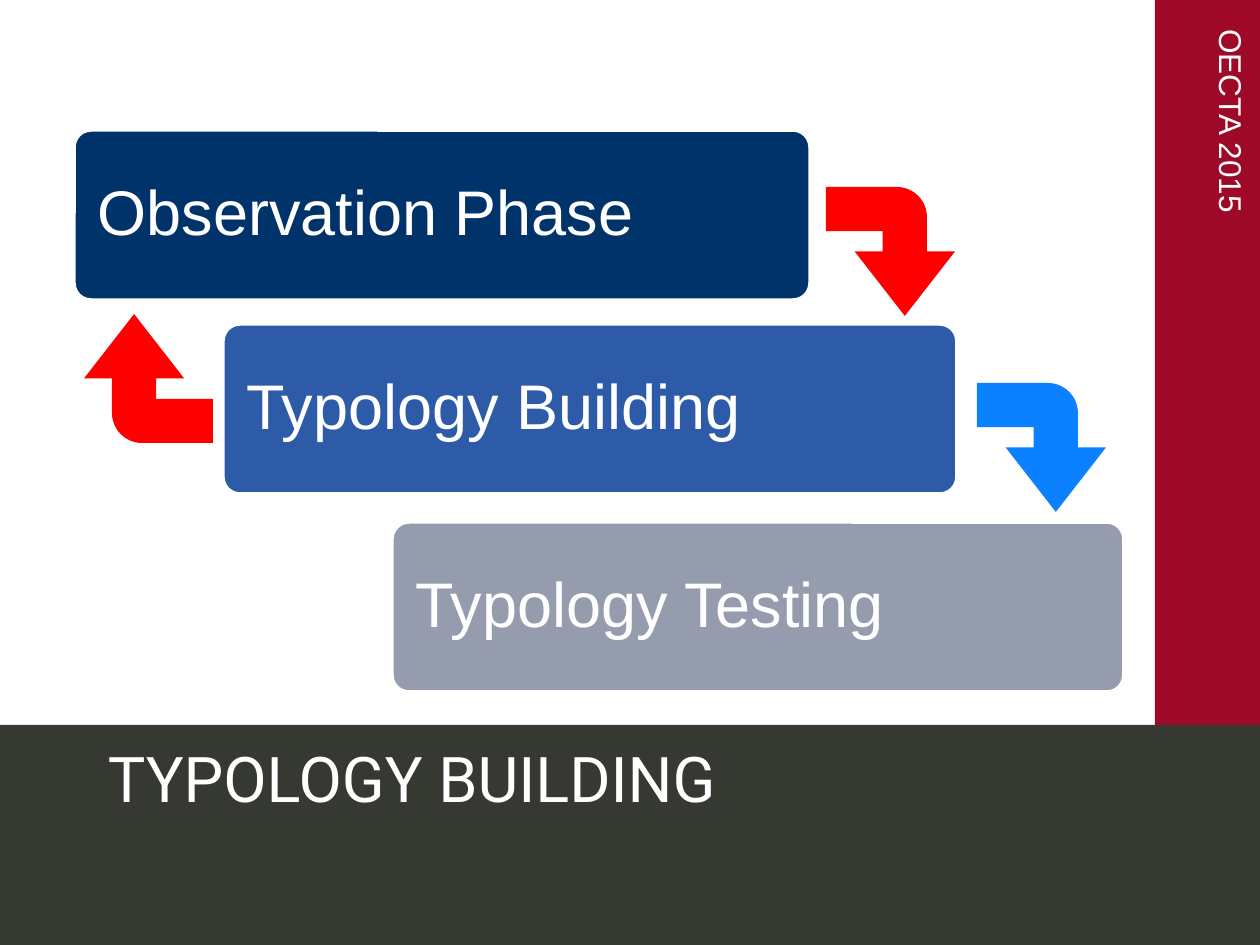
from pptx import Presentation
from pptx.dml.color import RGBColor
from pptx.enum.shapes import MSO_SHAPE
from pptx.enum.text import MSO_ANCHOR, PP_ALIGN
from pptx.util import Pt

RECT, ROUNDED, BENT_ARROW = MSO_SHAPE.RECTANGLE, MSO_SHAPE.ROUNDED_RECTANGLE, MSO_SHAPE.BENT_ARROW
TOP, MIDDLE = MSO_ANCHOR.TOP, MSO_ANCHOR.MIDDLE
LEFT = PP_ALIGN.LEFT

PX = 914400 // 126
WIDTH, HEIGHT = 1260, 945

COLORS = {
    "white": "FFFFFF", "crimson": "9E0927", "charcoal": "363832",
    "navy": "003369", "blue": "2E5BA8", "grey": "959CAE",
    "red": "FF0000", "azure": "0B81FF",
}

# left, top, width, height, fill
BANDS = [
    (1155, 0, 105, HEIGHT, "crimson"),
    (0, 725, WIDTH, 220, "charcoal"),
]
TITLE = "TYPOLOGY BUILDING"
SIDE_LABEL = "OECTA 2015"

# text, left, top, width, fill
PHASES = [
    ("Observation Phase", 74, 130, 736, "navy"),
    ("Typology Building", 223, 324, 734, "blue"),
    ("Typology Testing", 392, 522, 732, "grey"),
]
PHASE_HEIGHT = 170

# left, top, rotation, fill
ARROWS = [
    (84, 314, 270, "red"),
    (977, 383, 90, "azure"),
    (826, 187, 90, "red"),
]
ARROW_SIZE = 129
ARROW_ADJUSTMENTS = (0.343, 0.389, 0.5, 0.233)


def rgb(name):
    return RGBColor.from_string(COLORS[name])


def emu(*lengths):
    return [n * PX for n in lengths]


def add_filled(s, kind, box, fill):
    sp = s.shapes.add_shape(kind, *emu(*box))
    sp.shadow.inherit = False
    sp.fill.solid()
    sp.fill.fore_color.rgb = rgb(fill)
    sp.line.fill.background()
    return sp


def write(sp, text, size, font, anchor, insets):
    """Put one white paragraph in sp; insets are left, top, right, bottom in px."""
    tf = sp.text_frame
    tf.word_wrap = True
    tf.vertical_anchor = anchor
    tf.margin_left, tf.margin_top, tf.margin_right, tf.margin_bottom = emu(*insets)
    p = tf.paragraphs[0]
    p.text = text
    p.alignment = LEFT
    p.font.size = Pt(size)
    p.font.name = font
    p.font.color.rgb = rgb("white")
    return p


def main():
    prs = Presentation()
    prs.slide_width, prs.slide_height = emu(WIDTH, HEIGHT)
    s = prs.slides.add_slide(prs.slide_layouts[6])

    for *box, fill in BANDS:
        add_filled(s, RECT, box, fill)

    side = s.shapes.add_textbox(*emu(989, 221, 493, 50))
    side.rotation = 90
    write(side, SIDE_LABEL, 18, "Arial", TOP, (30, 10, 13, 0))

    title = s.shapes.add_textbox(*emu(95, 725, 1124, 105))
    write(title, TITLE, 36, "Roboto", MIDDLE, (13, 6, 13, 6))

    for text, left, top, width, fill in PHASES:
        sp = add_filled(s, ROUNDED, (left, top, width, PHASE_HEIGHT), fill)
        sp.adjustments[0] = 0.1
        sp.line.color.rgb = rgb("white")
        sp.line.width = Pt(2)
        p = write(sp, text, 36, "Arial", MIDDLE, (19, 19, 19, 19))
        p.line_spacing = 0.9

    for left, top, rotation, fill in ARROWS:
        sp = add_filled(s, BENT_ARROW, (left, top, ARROW_SIZE, ARROW_SIZE), fill)
        sp.rotation = rotation
        for i, value in enumerate(ARROW_ADJUSTMENTS):
            sp.adjustments[i] = value

    prs.save("out.pptx")


if __name__ == "__main__":
    main()
